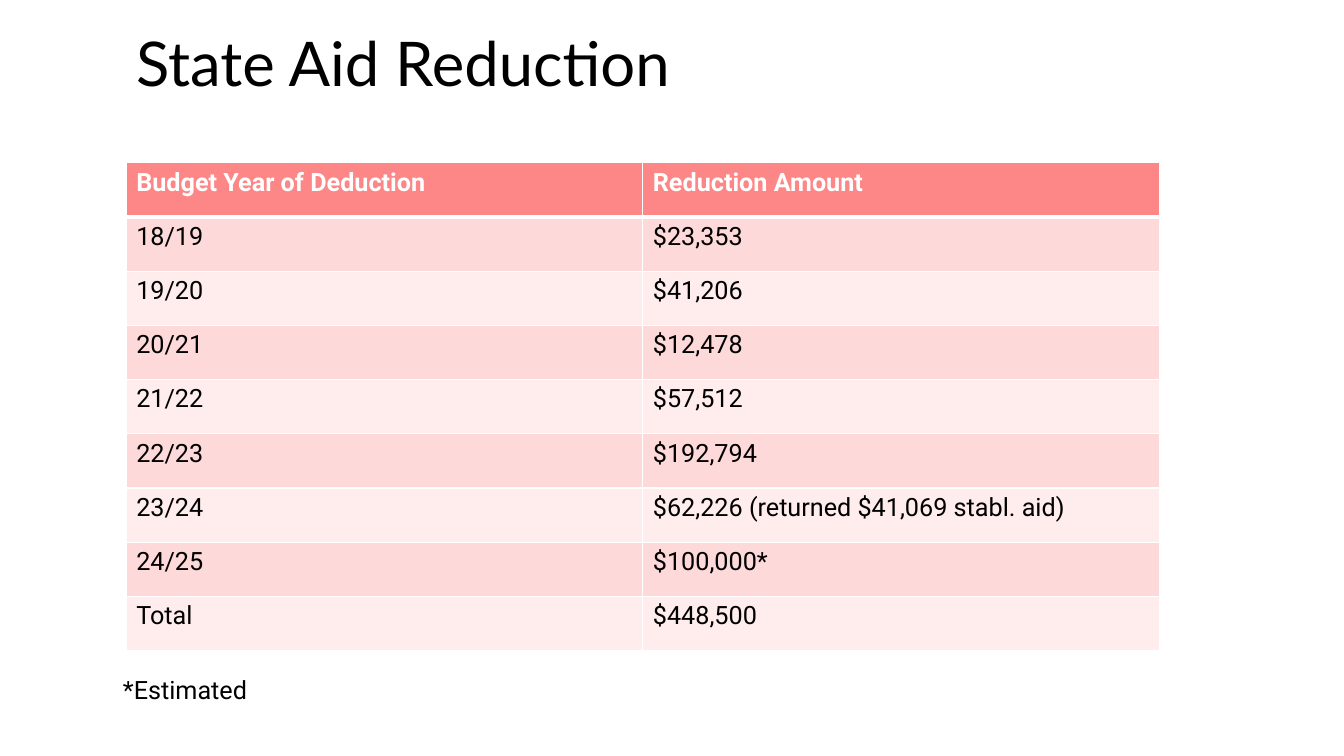
from dataclasses import dataclass

from lxml.etree import SubElement
from pptx import Presentation
from pptx.dml.color import RGBColor as Rgb
from pptx.enum.text import MSO_ANCHOR as Anchor
from pptx.oxml import parse_xml
from pptx.oxml.ns import nsdecls, qn
from pptx.util import Cm, Pt


@dataclass(frozen=True)
class Theme:
    """Colours, fonts and type sizes of the slide."""
    ink: str = "000000"
    paper: str = "FFFFFF"
    header: str = "FD8686"
    bands: tuple = ("FED9D9", "FFEDED")
    title_font: str = "Lato"
    body_font: str = "Roboto"
    title_size: int = 44
    body_size: int = 18
    rule: int = 1
    header_rule: int = 3


THEME = Theme()
REDUCTIONS = [
    ("Budget Year of Deduction", "Reduction Amount"),
    ("18/19", "$23,353"),
    ("19/20", "$41,206"),
    ("20/21", "$12,478"),
    ("21/22", "$57,512"),
    ("22/23", "$192,794"),
    ("23/24", "$62,226 (returned $41,069 stabl. aid)"),
    ("24/25", "$100,000*"),
    ("Total", "$448,500"),
]


def write(frame, words, font, size, color, bold=False):
    """Add one styled run to the first paragraph and return the paragraph."""
    paragraph = frame.paragraphs[0]
    run = paragraph.add_run()
    run.text = words
    run.font.name = font
    run.font.size = Pt(size)
    run.font.bold = bold
    run.font.color.rgb = Rgb.from_string(color)
    return paragraph


def rule_cell(cell, widths):
    """Draw the left, right, top and bottom borders of a cell."""
    properties = cell._tc.get_or_add_tcPr()
    for position, (side, width) in enumerate(zip("LRTB", widths)):
        border = parse_xml(f'<a:ln{side} {nsdecls("a")} w="{Pt(width)}"/>')
        fill = SubElement(border, qn("a:solidFill"))
        SubElement(fill, qn("a:srgbClr"), val=THEME.paper)
        properties.insert(position, border)


def add_label(slide, box, words, font, size):
    """Place a line of text at the top of its box."""
    frame = slide.shapes.add_textbox(*box).text_frame
    frame.word_wrap = True
    frame.vertical_anchor = Anchor.TOP
    return write(frame, words, font, size, THEME.ink)


def add_title(slide, box):
    """Place the slide title."""
    title = add_label(slide, box, "State Aid Reduction", THEME.title_font, THEME.title_size)
    title.line_spacing = 0.9


def add_reductions(slide, box):
    """Place the table of reductions by budget year."""
    left, top, width, height = box
    reductions = slide.shapes.add_table(
        len(REDUCTIONS), len(REDUCTIONS[0]), left, top, width, height).table
    for row, entries in enumerate(REDUCTIONS):
        is_header = row == 0
        fill = THEME.header if is_header else THEME.bands[(row - 1) % 2]
        color = THEME.paper if is_header else THEME.ink
        upper = THEME.header_rule if row == 1 else THEME.rule
        lower = THEME.header_rule if is_header else THEME.rule
        for column, words in enumerate(entries):
            cell = reductions.cell(row, column)
            cell.fill.solid()
            cell.fill.fore_color.rgb = Rgb.from_string(fill)
            write(cell.text_frame, words, THEME.body_font, THEME.body_size, color, is_header)
            rule_cell(cell, (THEME.rule, THEME.rule, upper, lower))


def add_footnote(slide, box):
    """Place the note on the estimated amount."""
    add_label(slide, box, "*Estimated", THEME.body_font, THEME.body_size)


def main():
    """Build the slide and save it."""
    deck = Presentation()
    deck.slide_width, deck.slide_height = Cm(33.87), Cm(19.05)
    slide = deck.slides.add_slide(deck.slide_layouts[6])
    left = Cm(3.18)
    add_title(slide, (left, Cm(0.71), Cm(27.51), Cm(2.39)))
    add_reductions(slide, (left, Cm(4.1), Cm(26.04), Cm(12.3)))
    add_footnote(slide, (left - Cm(0.33), Cm(16.87), Cm(7.44), Cm(1.02)))
    deck.save("out.pptx")


if __name__ == "__main__":
    main()
